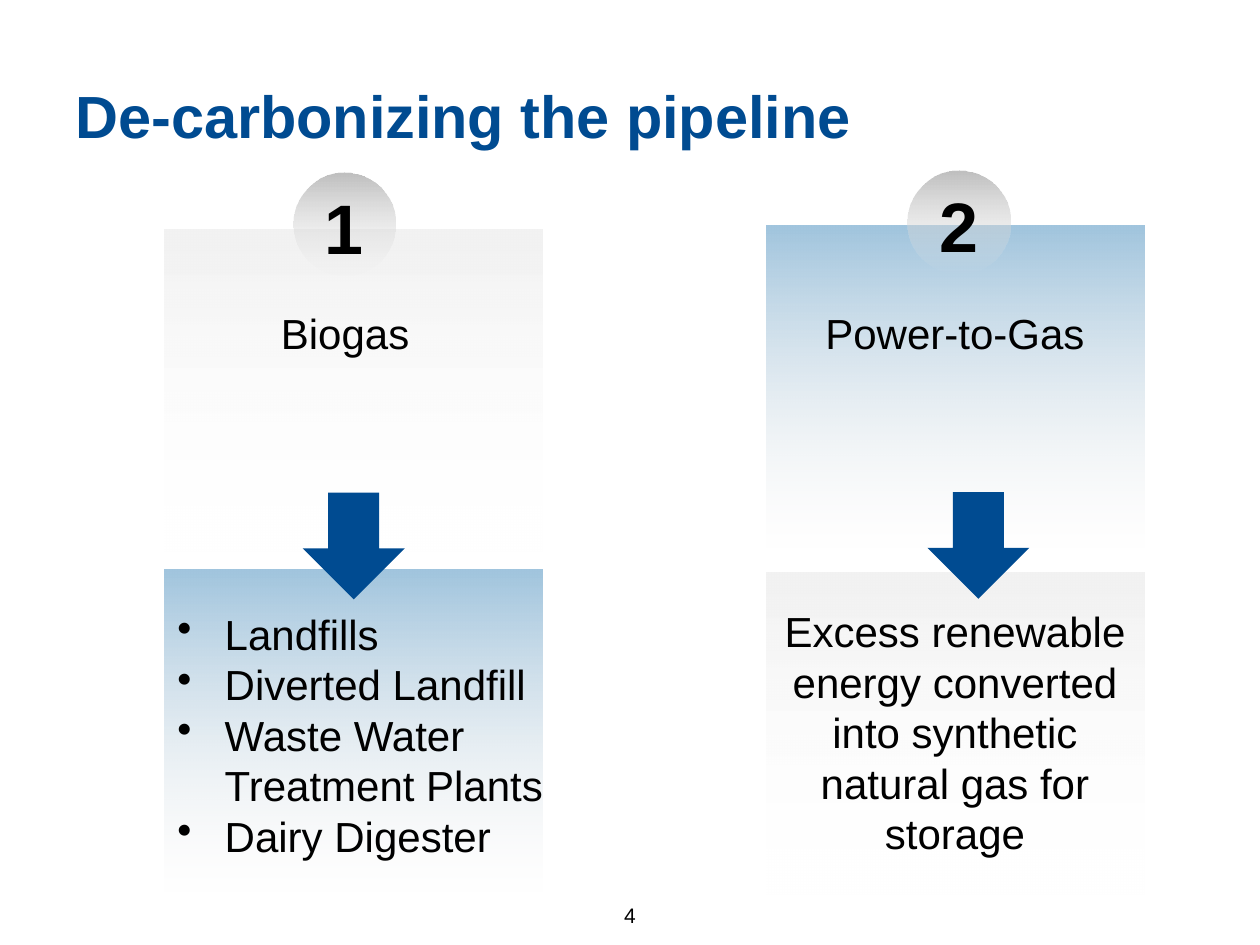
import pptx
import pptx.util
import pptx.dml.color
import pptx.enum.shapes
import pptx.enum.text
import pptx.oxml.ns
import lxml.etree

Pt = pptx.util.Pt
qn = pptx.oxml.ns.qn
SHAPE = pptx.enum.shapes.MSO_SHAPE
ALIGN = pptx.enum.text.PP_ALIGN
ANCHOR = pptx.enum.text.MSO_ANCHOR

BLACK, NAVY = "000000", "004B91"
BLUE_FADE = ("A1C5DE", "EAEAEA")
GREY_FADE = ("F2F2F2", "FFFFFF")
BADGE_FADE = ("BFBFBF", "EAEAEA")


def color(value):
    return pptx.dml.color.RGBColor.from_string(value)


def add_text(slide, box, paragraphs, size=24, fill=BLACK, bold=False,
             align=ALIGN.LEFT, anchor=ANCHOR.TOP, wrap=True, indent=0):
    frame = slide.shapes.add_textbox(*map(Pt, box)).text_frame
    frame.word_wrap = wrap
    frame.vertical_anchor = anchor
    for number, words in enumerate(paragraphs):
        paragraph = frame.add_paragraph() if number else frame.paragraphs[0]
        if indent:
            properties = paragraph._p.get_or_add_pPr()
            properties.set("marL", str(int(Pt(indent))))
            properties.set("indent", str(-int(Pt(indent))))
            lxml.etree.SubElement(properties, qn("a:buChar"), char="•")
        paragraph.alignment = align
        run = paragraph.add_run()
        run.text = words
        run.font.name = "Arial"
        run.font.size = Pt(size)
        run.font.bold = bold
        run.font.color.rgb = color(fill)


def add_plain_shape(slide, kind, box):
    shape = slide.shapes.add_shape(kind, *map(Pt, box))
    shape.shadow.inherit = False
    shape.line.fill.background()
    return shape


def add_fade(slide, kind, box, fade):
    """Shape whose colour fades to fully transparent at the bottom."""
    shape = add_plain_shape(slide, kind, box)
    shape.rotation = 180
    shape.fill.gradient()
    shape.fill.gradient_angle = 90
    for stop, position, value in zip(shape.fill.gradient_stops, (0, 1), fade):
        stop.position = position
        stop.color.rgb = color(value)
    end_color = list(shape.element.spPr.iter(qn("a:srgbClr")))[-1]
    lxml.etree.SubElement(end_color, qn("a:alpha"), val="0")


def add_source_column(slide, box, number, label, details, upper_fade, lower_fade,
                      lower_top, badge_at, label_at, detail_box, arrow_at,
                      **detail_format):
    """Offsets are relative to the top left corner of the column."""
    left, top, width, height = box

    def place(offset, size):
        return (left + offset[0], top + offset[1], *size)

    # Panels and number badge
    add_fade(slide, SHAPE.RECTANGLE, place((0, lower_top), (width, height)), lower_fade)
    add_fade(slide, SHAPE.RECTANGLE, box, upper_fade)
    add_fade(slide, SHAPE.OVAL, place(badge_at, (58.5, 58.5)), BADGE_FADE)
    number_at = (badge_at[0] + 10.8, badge_at[1] + 3)
    add_text(slide, place(number_at, (36.7, 55.4)), [number],
             size=40, bold=True, wrap=False)

    # Label and details
    add_text(slide, place(label_at, (217.4, 36)), [label], align=ALIGN.CENTER)
    add_text(slide, place(detail_box[:2], detail_box[2:]), details, **detail_format)

    # Arrow from upper to lower panel
    arrow = add_plain_shape(slide, SHAPE.DOWN_ARROW, place(arrow_at, (58.3, 61)))
    arrow.fill.solid()
    arrow.fill.fore_color.rgb = color(NAVY)


def build_slide(slide):
    # Title
    add_text(slide, (36, 28, 648, 75.6), ["De-carbonizing the pipeline"],
             size=34, fill=NAVY, bold=True, anchor=ANCHOR.MIDDLE)

    # Biogas
    add_source_column(
        slide, (94, 131, 216, 184), "1", "Biogas",
        ["Landfills", "Diverted Landfill", "Waste Water Treatment Plants",
         "Dairy Digester"],
        GREY_FADE, BLUE_FADE, lower_top=194.4, badge_at=(73.7, -32.2),
        label_at=(-5.5, 41), detail_box=(0.3, 213.2, 231, 152.6),
        arrow_at=(79, 150.5), indent=27)

    # Power-to-Gas
    add_source_column(
        slide, (437.8, 128.6, 216, 184), "2", "Power-to-Gas",
        ["Excess renewable energy converted into synthetic natural gas for storage"],
        BLUE_FADE, GREY_FADE, lower_top=198.3, badge_at=(81, -31),
        label_at=(-0.8, 43.4), detail_box=(-0.8, 214.1, 217.4, 152.6),
        arrow_at=(92.1, 152.6), align=ALIGN.CENTER)

    # Page number
    add_text(slide, (326.2, 512.6, 67.6, 21), ["4"], size=12,
             align=ALIGN.CENTER, anchor=ANCHOR.MIDDLE)


def main():
    deck = pptx.Presentation()
    deck.slide_width, deck.slide_height = Pt(720), Pt(540)
    build_slide(deck.slides.add_slide(deck.slide_layouts[6]))
    deck.save("out.pptx")


if __name__ == "__main__":
    main()
